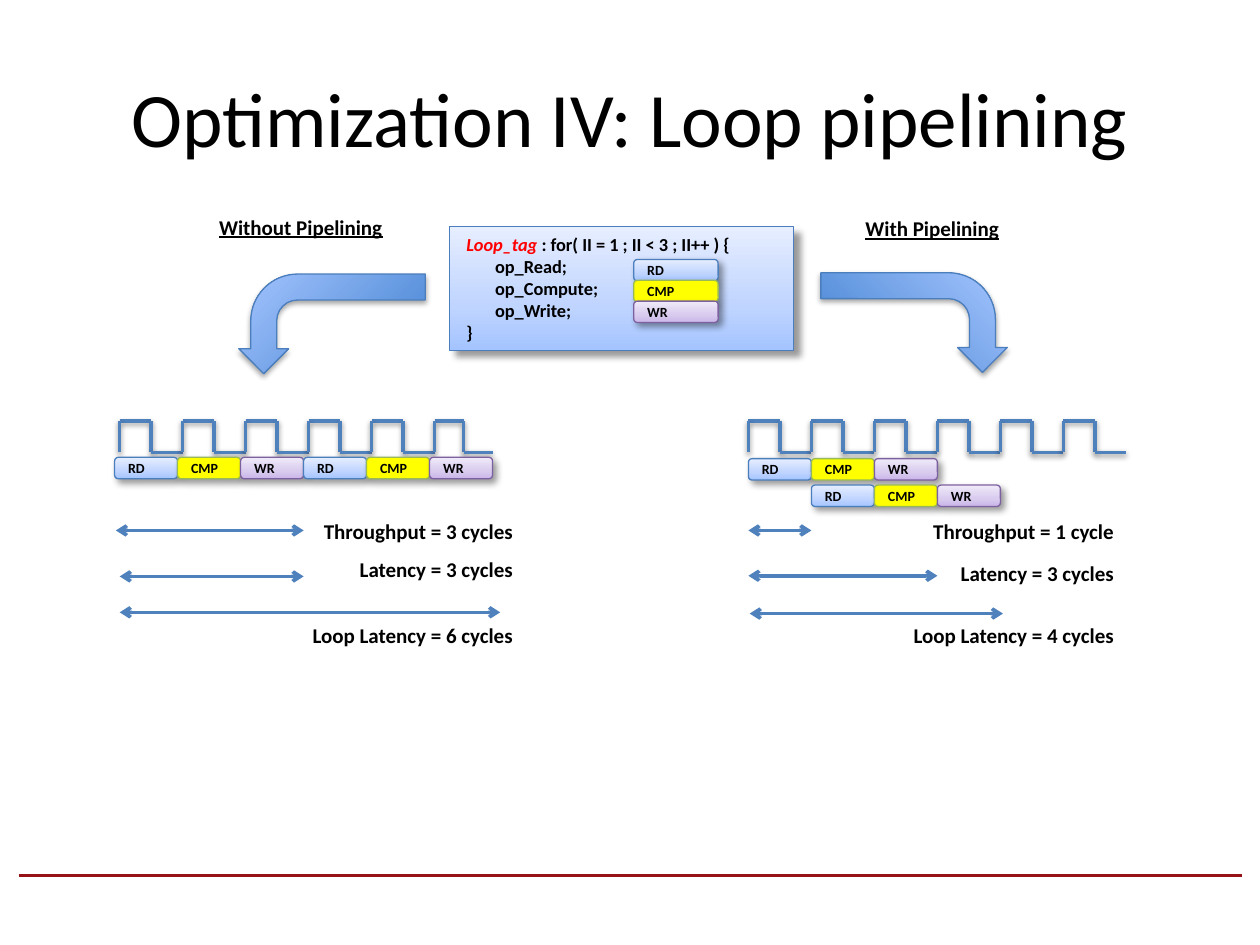
from typing import NamedTuple

from lxml import etree
from pptx import Presentation
from pptx.dml.color import RGBColor
from pptx.enum.shapes import MSO_CONNECTOR, MSO_SHAPE
from pptx.enum.text import MSO_ANCHOR, PP_ALIGN
from pptx.oxml.ns import qn
from pptx.util import Emu, Inches, Pt

LINE = MSO_CONNECTOR.STRAIGHT
RECT, ROUND, BENT = MSO_SHAPE.RECTANGLE, MSO_SHAPE.ROUNDED_RECTANGLE, MSO_SHAPE.BENT_ARROW
LEFT, MID, RIGHT = PP_ALIGN.LEFT, PP_ALIGN.CENTER, PP_ALIGN.RIGHT
TOP, CENTRE = MSO_ANCHOR.TOP, MSO_ANCHOR.MIDDLE

# The slide is a grid of 20 columns and 15 rows; one column is one clock cycle.
COLS, ROWS = 20, 15
CELL = Inches(0.5)
FONT = "Calibri"
COLORS = {
    "text": "000000", "tag": "FF0000", "rule": "971217", "wire": "4F81BD",
    "blue": "4B7EBC", "green": "98B955", "purple": "7D60A0", "yellow": "FFFF00",
}
BLUES = ((0, "A4C4FF"), (35, "BFD4FF"), (100, "E6EEFF"))
PURPLES = ((0, "C9B5E8"), (35, "D8CBEE"), (100, "F0EAF9"))
DEEP = ((0, "3F80CE"), (100, "A4C4FF"))


class Box(NamedTuple):
    x: float
    y: float
    w: float
    h: float


class Run(NamedTuple):
    text: str
    size: float = 12
    color: str = "text"
    bold: bool = True
    italic: bool = False
    under: bool = False


class Shade(NamedTuple):
    alpha: int
    blur: float
    dist: float
    angle: int


class Stage(NamedTuple):
    name: str
    fill: str | tuple
    edge: str


class Gauge(NamedTuple):
    """A double arrow and the measure written by it."""
    start: float
    end: float
    y: float
    text: str
    top: float
    width: float


class Panel(NamedTuple):
    head: str
    spot: Box
    wave: float
    last: float
    bars: tuple
    right: float
    gauges: tuple


STAGES = (
    Stage("RD", BLUES, "blue"),
    Stage("CMP", "yellow", "green"),
    Stage("WR", PURPLES, "purple"),
)
SOFT, CAST, DEPTH = Shade(38, 3.1, 1.6, 90), Shade(40, 4, 3, 45), Shade(40, 4, 5, 45)
BEND = Shade(35, 3.1, 1.8, 90)

PANELS = (
    Panel("Without Pipelining", Box(3.28, 3.3, 3.04, 0.6), 1.9, 0.46,
          ((1.82, 7.26), (4.82, 7.26)), 8.34, (
              Gauge(1.84, 4.82, 8.42, "Throughput = 3 cycles", 8.14, 3.44),
              Gauge(1.9, 4.82, 9.15, "Latency = 3 cycles", 8.74, 3),
              Gauge(1.9, 7.94, 9.72, "Loop Latency = 6 cycles", 9.78, 3.64))),
    Panel("With Pipelining", Box(13.54, 3.32, 2.56, 0.6), 11.88, 0.5,
          ((11.88, 7.28), (12.88, 7.7)), 17.88, (
              Gauge(11.88, 12.88, 8.42, "Throughput = 1 cycle", 8.14, 3.32),
              Gauge(11.88, 14.88, 9.14, "Latency = 3 cycles", 8.8, 2.94),
              Gauge(11.9, 15.92, 9.74, "Loop Latency = 4 cycles", 9.78, 3.84))),
)
CODE = (
    (Run(" ", 10.5), Run("Loop_tag ", 10.5, "tag", italic=True),
     Run(": for( II = 1 ; II < 3 ; II++ ) {", 10.5)),
    (Run("        op_Read;", 10.5),),
    (Run("        op_Compute;", 10.5),),
    (Run("        op_Write;", 10.5),),
    (Run(" }", 10.5),),
)


def grid(*cells: float) -> list[Emu]:
    return [Emu(round(n * CELL)) for n in cells]


def paint(name: str) -> RGBColor:
    return RGBColor.from_string(COLORS[name])


def node(root, tag: str, **attrs):
    return etree.SubElement(root, qn(tag), {k: str(v) for k, v in attrs.items()})


def cast(effects, shade: Shade) -> None:
    """Put an outer shadow in an effect list."""
    outer = node(effects, "a:outerShdw", blurRad=Pt(shade.blur), dist=Pt(shade.dist),
                 dir=shade.angle * 60000, rotWithShape=0)
    node(node(outer, "a:srgbClr", val="000000"), "a:alpha", val=shade.alpha * 1000)


def blend(shape, stops: tuple, angle: int) -> None:
    """Fill with a gradient; call before the line is set."""
    grad = node(shape.element.spPr, "a:gradFill", rotWithShape=1)
    ramp = node(grad, "a:gsLst")
    for pos, color in stops:
        node(node(ramp, "a:gs", pos=pos * 1000), "a:srgbClr", val=color)
    node(grad, "a:lin", ang=angle * 60000, scaled=0)


def write(frame, lines: tuple, align=LEFT, anchor=TOP, wrap: bool = True) -> None:
    frame.word_wrap = wrap
    frame.vertical_anchor = anchor
    for i, line in enumerate(lines):
        para = frame.add_paragraph() if i else frame.paragraphs[0]
        para.alignment = align
        for part in line:
            run = para.add_run()
            run.text = part.text
            font = run.font
            font.name, font.size = FONT, Pt(part.size)
            font.bold, font.italic, font.underline = part.bold, part.italic, part.under
            font.color.rgb = paint(part.color)


def label(slide, box: Box, run: Run, align=LEFT, anchor=TOP, wrap: bool = False) -> None:
    write(slide.shapes.add_textbox(*grid(*box)).text_frame, ((run,),), align, anchor, wrap)


def block(slide, kind, box: Box, fill: str | tuple, edge: str, shade: Shade, angle: int = 270):
    shape = slide.shapes.add_shape(kind, *grid(*box))
    if isinstance(fill, tuple):
        blend(shape, fill, angle)
    else:
        shape.fill.solid()
        shape.fill.fore_color.rgb = paint(fill)
    shape.line.color.rgb = paint(edge)
    shape.line.width = Pt(0.75)
    shape.shadow.inherit = False
    cast(shape.element.spPr.find(qn("a:effectLst")), shade)
    return shape


def wire(shapes, ends: tuple, color: str = "wire", shade: Shade | None = None,
         heads: bool = False) -> None:
    link = shapes.add_connector(LINE, *grid(*ends))
    link.line.color.rgb = paint(color)
    link.line.width = Pt(2)
    if heads:
        for tag in ("a:headEnd", "a:tailEnd"):
            node(link.line._get_or_add_ln(), tag, type="arrow")
    effects = node(link.element.spPr, "a:effectLst")
    if shade:
        cast(effects, shade)


def clock(slide, left: float, last: float, high: float = 6.68, low: float = 7.18) -> None:
    """Draw six clock pulses, the last with its own half width."""
    for i in range(6):
        half = last if i == 5 else 0.5
        x = left + i
        mid, end = x + half, x + 2 * half
        pulse = slide.shapes.add_group_shape()
        for ends in ((x, high, mid, high), (mid, high, mid, low),
                     (x, high, x, low), (mid, low, end, low)):
            wire(pulse.shapes, ends, shade=SOFT)


def chips(slide, x: float, y: float, wide: float, dx: float, dy: float) -> None:
    """Draw the three stages, each one step on from the one before."""
    for i, stage in enumerate(STAGES):
        box = Box(x + i * dx, y + i * dy, wide, 0.34)
        chip = block(slide, ROUND, box, stage.fill, stage.edge, CAST)
        write(chip.text_frame, ((Run(stage.name, 8),),), anchor=CENTRE)


def bend(slide, x: float, y: float, turn: int, flip: bool) -> None:
    arrow = block(slide, BENT, Box(x, y, 1.58, 2.96), DEEP, "blue", BEND, 225)
    for i, value in enumerate((0.26, 0.25, 0.25, 0.47)):
        arrow.adjustments[i] = value
    arrow.rotation = turn
    if flip:
        arrow.element.spPr.xfrm.set("flipH", "1")


def draw(slide, panel: Panel) -> None:
    label(slide, panel.spot, Run(panel.head, under=True))
    clock(slide, panel.wave, panel.last)
    for x, y in panel.bars:
        chips(slide, x, y, 1, 1, 0)
    for g in panel.gauges:
        wire(slide.shapes, (g.start, g.y, g.end, g.y), heads=True)
        label(slide, Box(panel.right - g.width, g.top, g.width, 0.6), Run(g.text), RIGHT)


def main() -> None:
    deck = Presentation()
    deck.slide_width, deck.slide_height = grid(COLS, ROWS)
    slide = deck.slides.add_slide(deck.slide_layouts[6])
    wire(slide.shapes, (0.3, 13.9, 19.72, 13.9), "rule")
    label(slide, Box(1, 0.6, 18, 2.5), Run("Optimization IV: Loop pipelining", 44, bold=False),
          MID, CENTRE, True)
    for panel in PANELS:
        draw(slide, panel)
    bend(slide, 4.48, 3.66, 270, True)
    bend(slide, 13.72, 3.64, 90, False)
    loop = block(slide, RECT, Box(7.14, 3.6, 5.46, 1.96), BLUES, "blue", DEPTH)
    write(loop.text_frame, CODE)
    chips(slide, 10.06, 4.12, 1.34, 0, 0.33)
    deck.save("out.pptx")


if __name__ == "__main__":
    main()
